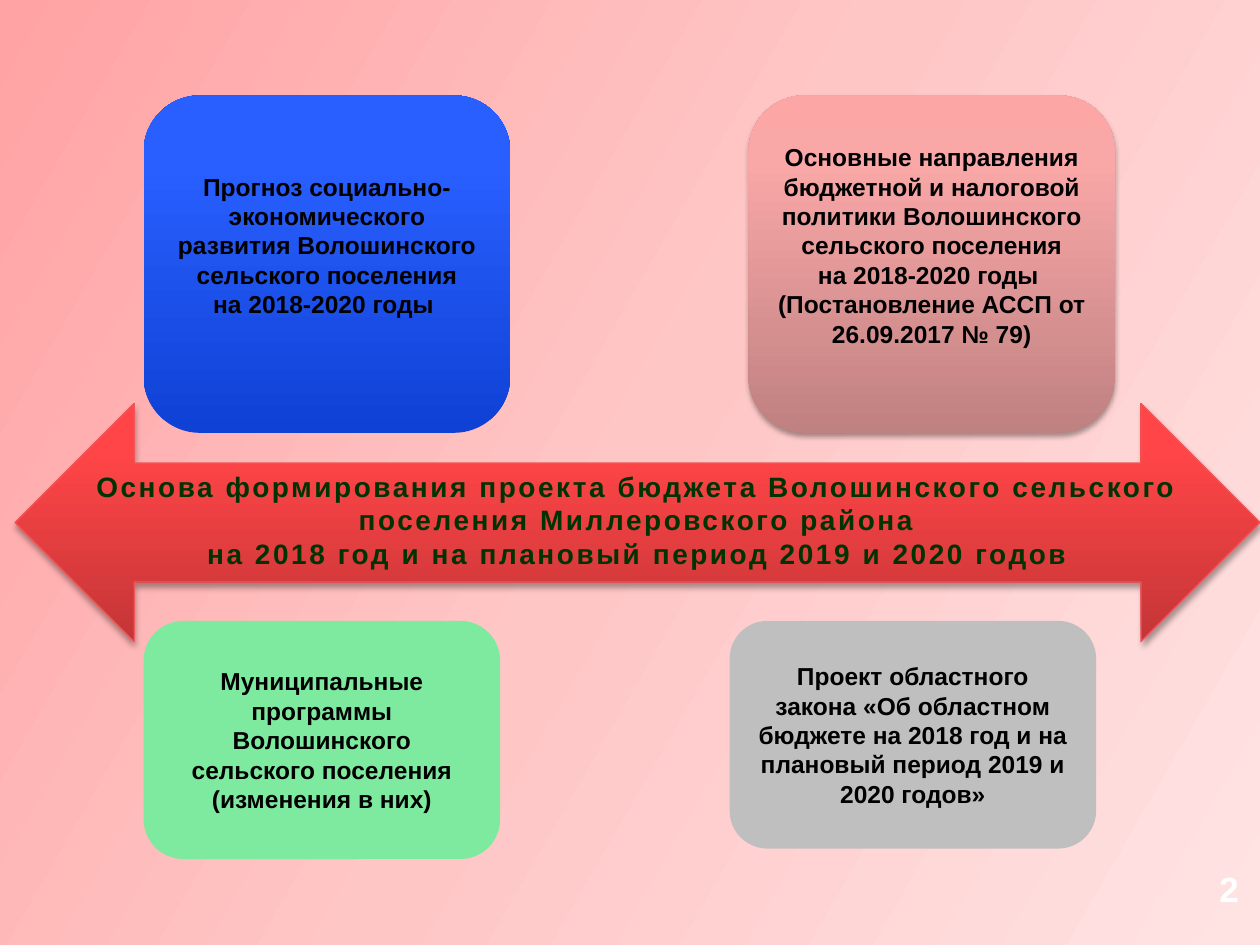
from lxml.etree import SubElement
from pptx import Presentation
from pptx.dml.color import RGBColor
from pptx.enum.shapes import MSO_SHAPE
from pptx.enum.text import MSO_ANCHOR, PP_ALIGN
from pptx.oxml.ns import qn
from pptx.util import Emu, Inches, Pt

WIDE, HIGH = 10, 7.5
LEFT, RIGHT = 0.114, 0.594
TOP, LOW = 0.101, 0.657
CARD_W, CARD_H = 0.291, 0.357

CARDS = [
    ((LEFT, TOP, CARD_W, CARD_H), ("0F41D5", "295FFF", "2B60FF"), False, 0.35,
     ["Прогноз социально-экономического развития Волошинского сельского поселения",
      "на 2018-2020 годы "]),
    ((RIGHT, TOP, CARD_W, CARD_H), ("C08181", "F9A7A7", "FCA6A6"), True, 0.35,
     ["Основные направления бюджетной и налоговой политики Волошинского "
      "сельского поселения",
      "на 2018-2020 годы ",
      "(Постановление АССП от 26.09.2017 № 79)"]),
    ((LEFT, LOW, 0.283, 0.252), "7EEA9F", False, 0.05,
     ["Муниципальные программы Волошинского сельского поселения",
      "(изменения в них)"]),
    ((0.579, LOW, CARD_W, 0.241), "BFBFBF", False, 0.05,
     ["Проект областного закона «Об областном бюджете на 2018 год и на "
      "плановый период 2019 и 2020 годов»"]),
]


def color(code):
    return RGBColor.from_string(code)


def place(box):
    """Turn shares of the slide into lengths."""
    return [Emu(int(Inches(part * side)))
            for part, side in zip(box, (WIDE, HIGH, WIDE, HIGH))]


def blend(fill, stops, angle):
    """Fill with a gradient; the angle runs clockwise."""
    fill.gradient()
    fill.gradient_angle = (360 - angle) % 360
    bank = fill._fill._gradFill.find(qn("a:gsLst"))
    for old in list(bank):
        bank.remove(old)
    for spot, code in stops:
        stop = SubElement(bank, qn("a:gs"), pos=str(spot * 1000))
        SubElement(stop, qn("a:srgbClr"), val=code)


def shade(shape):
    """Give the shape a soft shadow below it."""
    list_ = shape._element.spPr.find(qn("a:effectLst"))
    cast = SubElement(list_, qn("a:outerShdw"), blurRad=str(Pt(3.1)),
                      dist=str(Pt(1.8)), dir="5400000", rotWithShape="0")
    tint = SubElement(cast, qn("a:srgbClr"), val="000000")
    SubElement(tint, qn("a:alpha"), val="35000")


def write(shape, lines, size, code, align=PP_ALIGN.CENTER, space=0, **frame):
    text = shape.text_frame
    for key, value in {"word_wrap": True, **frame}.items():
        setattr(text, key, value)
    text.text = "\n".join(lines)
    for para in text.paragraphs:
        para.alignment = align
        for run in para.runs:
            font = {"name": "Arial", "size": Pt(size), "bold": True}
            for key, value in font.items():
                setattr(run.font, key, value)
            run.font.color.rgb = color(code)
            if space:
                run._r.get_or_add_rPr().set("spc", str(int(space * 100)))


def block(slide, kind, box, paint, cast):
    shape = slide.shapes.add_shape(kind, *place(box))
    shape.shadow.inherit = False
    shape.line.fill.background()
    if isinstance(paint, str):
        shape.fill.solid()
        shape.fill.fore_color.rgb = color(paint)
    else:
        blend(shape.fill, zip((0, 80, 100), paint), 270)
    if cast:
        shade(shape)
    return shape


def card(slide, box, paint, cast, foot, lines):
    shape = block(slide, MSO_SHAPE.ROUNDED_RECTANGLE, box, paint, cast)
    write(shape, lines, 14, "000000", margin_bottom=Inches(foot),
          vertical_anchor=MSO_ANCHOR.MIDDLE)


def arrow(slide, box):
    shape = block(slide, MSO_SHAPE.LEFT_RIGHT_ARROW, box,
                  ("C43537", "FF4547", "FF4649"), True)
    shape.line.color.rgb = color("EF5759")
    shape.line.width = Pt(0.75)
    write(shape, ["Основа формирования проекта бюджета Волошинского сельского "
                  "поселения Миллеровского района\v"
                  "на 2018 год и на плановый период 2019 и 2020 годов"],
          16, "003300", space=1.5, vertical_anchor=MSO_ANCHOR.TOP)


def number(slide, box):
    shape = slide.shapes.add_textbox(*place(box))
    write(shape, ["2"], 20, "FFFFFF", PP_ALIGN.RIGHT,
          vertical_anchor=MSO_ANCHOR.MIDDLE)


def main():
    deck = Presentation()
    deck.slide_width, deck.slide_height = Inches(WIDE), Inches(HIGH)
    slide = deck.slides.add_slide(deck.slide_layouts[6])
    blend(slide.background.fill,
          [(0, "FFA3A4"), (50, "FFC6C6"), (100, "FFE3E3")], 30)
    for parts in CARDS:
        card(slide, *parts)
    arrow(slide, (0.012, 0.427, 0.988, 0.252))
    number(slide, (0.893, 0.913, 0.1, 0.054))
    deck.save("out.pptx")


if __name__ == "__main__":
    main()
